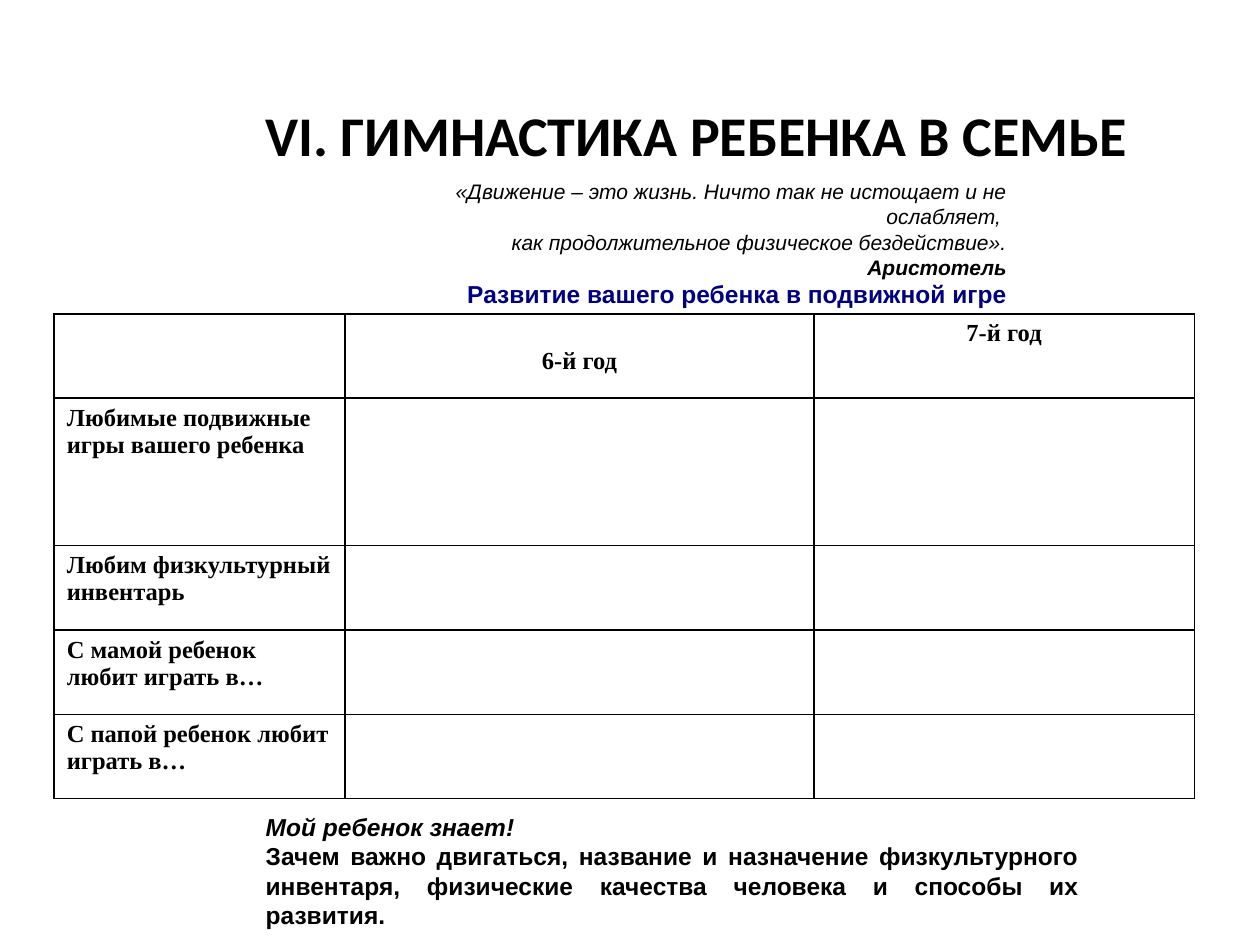
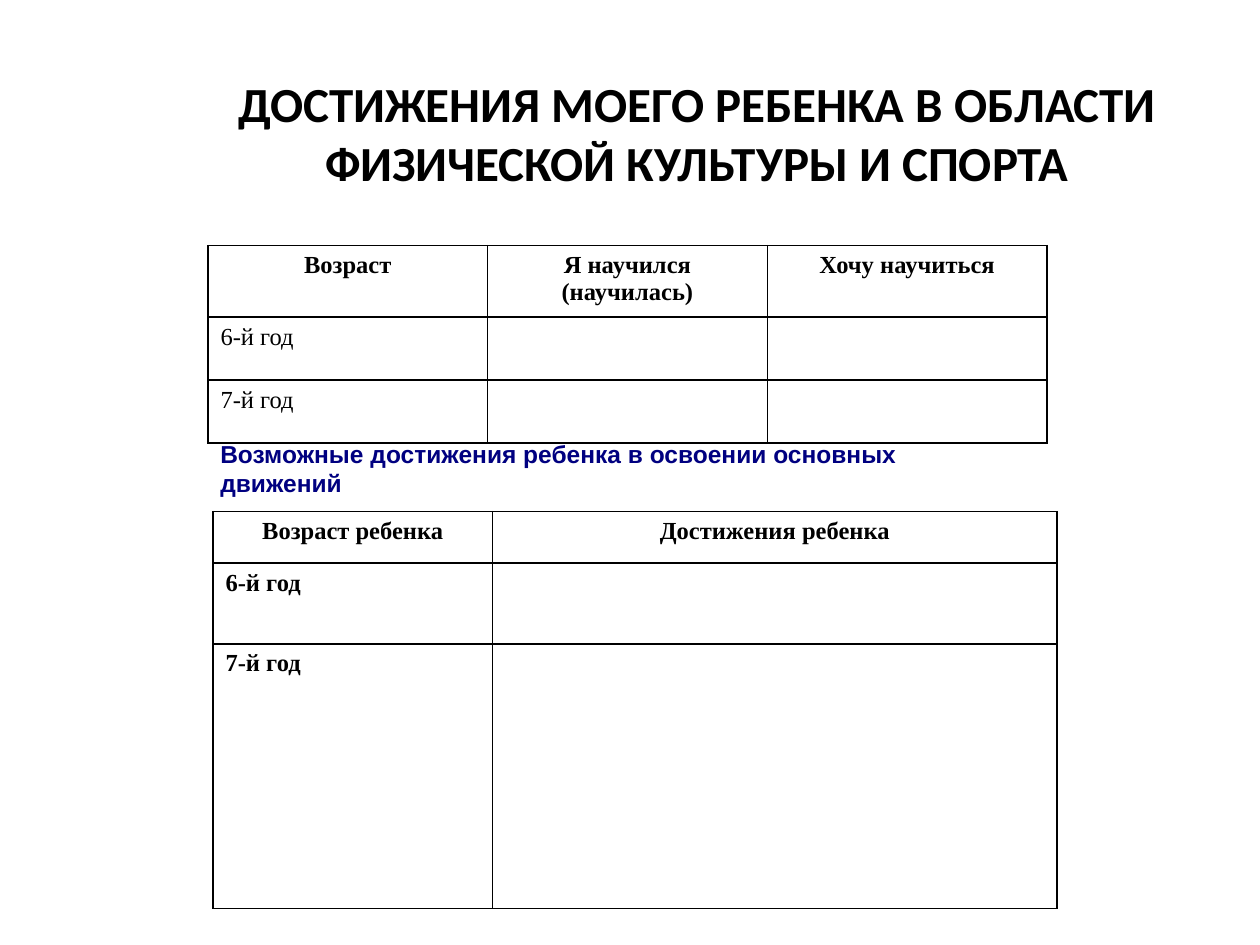
from dataclasses import dataclass

from lxml.etree import SubElement
from pptx import Presentation
from pptx.dml.color import RGBColor
from pptx.enum.text import MSO_ANCHOR as Anchor, PP_ALIGN as Align
from pptx.oxml.ns import qn
from pptx.slide import Slide
from pptx.table import _Cell as Cell
from pptx.text.text import _Paragraph as Paragraph
from pptx.util import Inches, Pt

BLACK = RGBColor(0x00, 0x00, 0x00)
NAVY = RGBColor(0x00, 0x00, 0x80)
HEADING_FONT, BODY_FONT, TABLE_FONT = "Calibri", "Arial", "Times New Roman"
BORDER_WIDTH = Pt(1)


@dataclass(frozen=True)
class Line:
    """One paragraph of uniformly styled text."""
    text: str
    size: int = 14
    font: str = BODY_FONT
    color: RGBColor = BLACK
    bold: bool = True
    italic: bool = False
    align: Align = Align.LEFT


@dataclass(frozen=True)
class TextBlock:
    """A vertically centred text box, measured in inches."""
    left: float
    top: float
    width: float
    height: float
    lines: tuple[Line, ...]
    bottom_inset: float = 0.05


@dataclass(frozen=True)
class Entry:
    """The text of one table cell."""
    text: str = ""
    bold: bool = True
    align: Align = Align.LEFT
    top_inset: float = 0.05


@dataclass(frozen=True)
class Grid:
    """A bordered table, measured in inches."""
    left: float
    top: float
    columns: tuple[float, ...]
    rows: tuple[float, ...]
    header: tuple[Entry, ...]
    labels: tuple[str, ...]
    bold_labels: bool = True


def heading(text: str) -> Entry:
    """Return a centred column heading."""
    return Entry(text, align=Align.CENTER)


def title(text: str, top: float, height: float, size: int) -> TextBlock:
    """Return a slide title in the shared style."""
    line = Line(text, size, HEADING_FONT, align=Align.CENTER)
    return TextBlock(1.53, top, 8, height, (line,))


def write_line(para: Paragraph, line: Line) -> None:
    """Write one styled run into a paragraph."""
    para.alignment = line.align
    span = para.add_run()
    span.text = line.text
    span.font.name = line.font
    span.font.size = Pt(line.size)
    span.font.bold = line.bold
    span.font.italic = line.italic
    span.font.color.rgb = line.color


def add_text(page: Slide, block: TextBlock) -> None:
    """Draw a text block."""
    box = page.shapes.add_textbox(Inches(block.left), Inches(block.top),
                                  Inches(block.width), Inches(block.height))
    frame = box.text_frame
    frame.word_wrap = True
    frame.vertical_anchor = Anchor.MIDDLE
    frame.margin_bottom = Inches(block.bottom_inset)
    for index, line in enumerate(block.lines):
        para = frame.add_paragraph() if index else frame.paragraphs[0]
        write_line(para, line)


def add_borders(cell: Cell) -> None:
    """Outline a cell on all four sides."""
    properties = cell._tc.get_or_add_tcPr()
    for index, side in enumerate(("lnL", "lnR", "lnT", "lnB")):
        border = SubElement(properties, qn(f"a:{side}"), w=str(BORDER_WIDTH))
        fill = SubElement(border, qn("a:solidFill"))
        SubElement(fill, qn("a:srgbClr"), val=str(BLACK))
        properties.insert(index, border)


def fill_cell(cell: Cell, entry: Entry) -> None:
    """Style a table cell and write its entry."""
    cell.fill.background()
    add_borders(cell)
    cell.margin_top = Inches(entry.top_inset)
    para = cell.text_frame.paragraphs[0]
    para.font.size = Pt(14)
    if entry.text:
        write_line(para, Line(entry.text, font=TABLE_FONT, bold=entry.bold, align=entry.align))


def add_grid(page: Slide, grid: Grid) -> None:
    """Draw a table with a header row and labels down the first column."""
    shape = page.shapes.add_table(len(grid.rows), len(grid.columns),
                                  Inches(grid.left), Inches(grid.top),
                                  Inches(sum(grid.columns)), Inches(sum(grid.rows)))
    table = shape.table
    table.first_row = table.horz_banding = False
    for column, width in zip(table.columns, grid.columns):
        column.width = Inches(width)
    for row, height in zip(table.rows, grid.rows):
        row.height = Inches(height)
    blanks = (Entry(),) * (len(grid.columns) - 1)
    body = [(Entry(label, grid.bold_labels), *blanks) for label in grid.labels]
    for row, entries in zip(table.rows, [grid.header, *body]):
        for cell, entry in zip(row.cells, entries):
            fill_cell(cell, entry)


FAMILY_GYMNASTICS = (
    title("VI. ГИМНАСТИКА РЕБЕНКА В СЕМЬЕ", 0.44, 1.25, 32),
    TextBlock(2.95, 1.47, 5.14, 0.93, (
        Line("«Движение – это жизнь. Ничто так не истощает и не ослабляет, ",
             12, bold=False, italic=True, align=Align.RIGHT),
        Line("как продолжительное физическое бездействие».",
             12, bold=False, italic=True, align=Align.RIGHT),
        Line("Аристотель", 12, italic=True, align=Align.RIGHT),
        Line("Развитие вашего ребенка в подвижной игре", color=NAVY, align=Align.RIGHT),
    )),
    Grid(0.43, 2.49, (2.31, 3.72, 3.02), (0.67, 1.17, 0.67, 0.67, 0.67),
         (Entry(), Entry("6-й год", align=Align.CENTER, top_inset=0.27), heading("7-й год")),
         ("Любимые подвижные игры вашего ребенка", "Любим физкультурный инвентарь",
          "С мамой ребенок любит играть в…", "С папой ребенок любит играть в…")),
    TextBlock(2.01, 6.51, 6.65, 0.8, (
        Line("Мой ребенок знает!", italic=True, align=Align.JUSTIFY),
        Line("Зачем важно двигаться, название и назначение физкультурного инвентаря, "
             "физические качества человека и способы их развития.", align=Align.JUSTIFY),
    )),
)

SPORT_ACHIEVEMENTS = (
    title("ДОСТИЖЕНИЯ МОЕГО РЕБЕНКА В ОБЛАСТИ ФИЗИЧЕСКОЙ КУЛЬТУРЫ И СПОРТА", 0.52, 1.06, 28),
    Grid(1.65, 1.95, (2.22,) * 3, (0.53, 0.5, 0.5),
         (heading("Возраст"), heading("Я научился (научилась)"), heading("Хочу научиться")),
         ("6-й год", "7-й год"), bold_labels=False),
    TextBlock(1.65, 3.55, 5.96, 0.63, (
        Line("Возможные достижения ребенка в освоении основных движений", color=NAVY),
    ), bottom_inset=0.35),
    Grid(1.69, 4.06, (2.22, 4.48), (0.41, 0.64, 2.1),
         (heading("Возраст ребенка"), heading("Достижения ребенка")),
         ("6-й год", "7-й год")),
)


def main() -> None:
    """Build and save the deck."""
    deck = Presentation()
    deck.slide_width, deck.slide_height = Inches(10), Inches(7.5)
    for items in (FAMILY_GYMNASTICS, SPORT_ACHIEVEMENTS):
        page = deck.slides.add_slide(deck.slide_layouts[6])
        for item in items:
            if isinstance(item, Grid):
                add_grid(page, item)
            else:
                add_text(page, item)
    deck.save("out.pptx")


if __name__ == "__main__":
    main()
